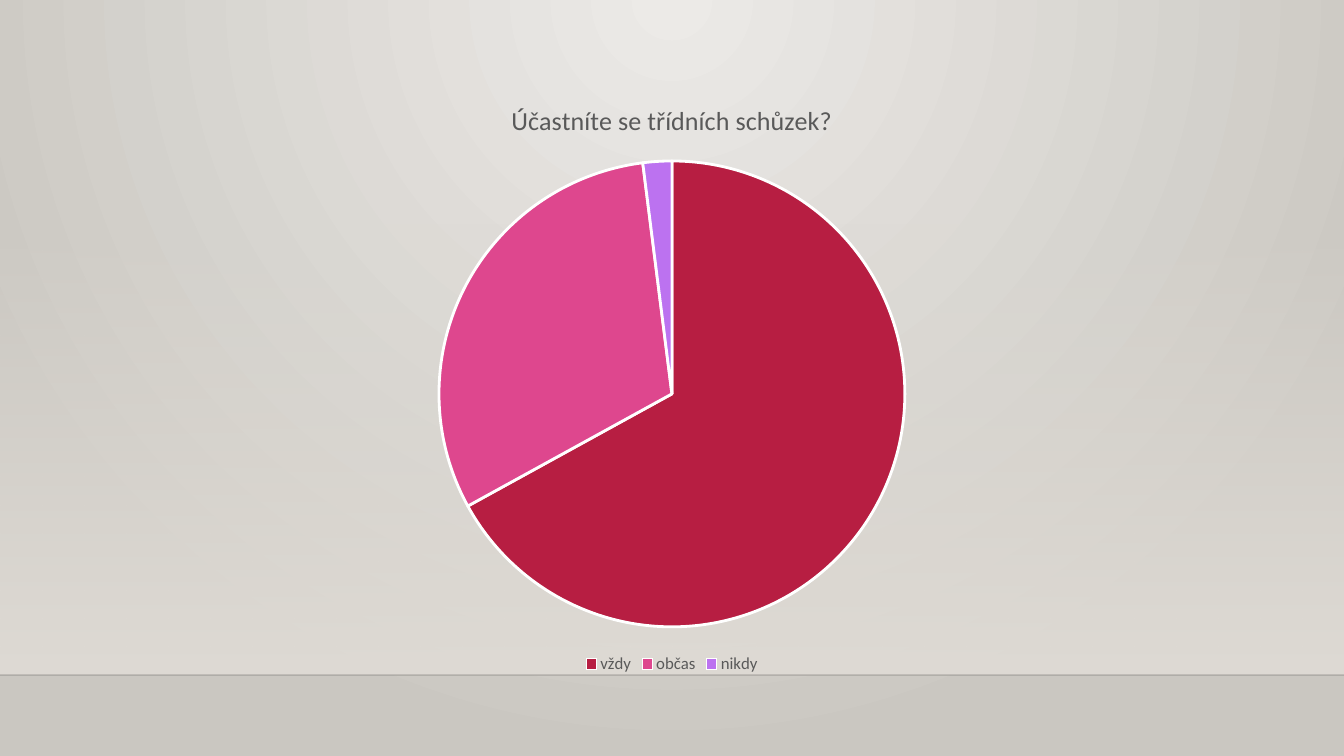
from lxml import etree
from pptx import Presentation
from pptx.chart.data import CategoryChartData
from pptx.dml.color import RGBColor
from pptx.enum.chart import XL_CHART_TYPE, XL_LEGEND_POSITION
from pptx.enum.shapes import MSO_CONNECTOR, MSO_SHAPE
from pptx.oxml import parse_xml
from pptx.oxml.ns import nsdecls, qn
from pptx.util import Pt

PIE = XL_CHART_TYPE.PIE
BOTTOM = XL_LEGEND_POSITION.BOTTOM
RECTANGLE = MSO_SHAPE.RECTANGLE
STRAIGHT = MSO_CONNECTOR.STRAIGHT

EMU_PER_PX = 914400 / 100.8
SLIDE_W, SLIDE_H = 1344, 756
FLOOR_Y = 675
FONT = "Calibri"
TEXT_GREY = "595959"

QUESTION = "Účastníte se třídních schůzek?"
# answer, share in percent, slice colour
ANSWERS = [
    ("vždy", 67, "B71E42"),
    ("občas", 31, "DE478E"),
    ("nikdy", 2, "BC72F0"),
]


def px(length):
    return round(length * EMU_PER_PX)


def color(hex_code):
    return RGBColor.from_string(hex_code)


def style_font(font, size, hex_code):
    font.name = FONT
    font.size = Pt(size)
    font.bold = False
    font.color.rgb = color(hex_code)


def set_gradient(fill, start, end):
    fill.gradient()
    for stop, hex_code, position in zip(fill.gradient_stops, (start, end), (0, 1)):
        stop.color.rgb = color(hex_code)
        stop.position = position


def set_alpha(parent, percent):
    """Make the first colour under parent partly transparent."""
    rgb = parent.find(".//" + qn("a:srgbClr"))
    etree.SubElement(rgb, qn("a:alpha"), val=str(percent * 1000))


def add_spotlight_background(slide):
    set_gradient(slide.background.fill, "ECEAE7", "CAC7C1")
    gradient = slide.element.find(".//" + qn("a:gradFill"))
    circle = parse_xml(
        f'<a:path {nsdecls("a")} path="circle">'
        '<a:fillToRect l="43000" t="0" r="43000" b="100000"/></a:path>'
    )
    gradient.replace(gradient.find(qn("a:lin")), circle)


def add_wall(slide, top):
    wall = slide.shapes.add_shape(
        RECTANGLE, 0, px(top), px(SLIDE_W), px(FLOOR_Y - top)
    )
    wall.shadow.inherit = False
    wall.line.fill.background()
    set_gradient(wall.fill, "DFDBD5", "DFDBD5")
    wall.fill.gradient_angle = 270
    set_alpha(wall.element.spPr, 0)


def add_floor_line(slide):
    edge = slide.shapes.add_connector(
        STRAIGHT, 0, px(FLOOR_Y), px(SLIDE_W), px(FLOOR_Y)
    )
    edge.line.color.rgb = color("000001")
    edge.line.width = Pt(1)
    set_alpha(edge.line._get_or_add_ln(), 20)
    etree.SubElement(edge.element.spPr, qn("a:effectLst"))


def place_plot(chart, x, y, w, h):
    """Fix the inner plot area, in fractions of the chart frame."""
    plot_area = chart.element.find(".//" + qn("c:plotArea"))
    for layout in plot_area.findall(qn("c:layout")):
        plot_area.remove(layout)
    plot_area.insert(0, parse_xml(
        f'<c:layout {nsdecls("c")}><c:manualLayout>'
        '<c:layoutTarget val="inner"/><c:xMode val="edge"/><c:yMode val="edge"/>'
        f'<c:x val="{x}"/><c:y val="{y}"/><c:w val="{w}"/><c:h val="{h}"/>'
        '</c:manualLayout></c:layout>'
    ))


def add_answer_pie(slide, left, top, width, height):
    names, shares, slice_colors = zip(*ANSWERS)
    survey = CategoryChartData()
    survey.categories = names
    survey.add_series(QUESTION, shares)
    chart = slide.shapes.add_chart(
        PIE, px(left), px(top), px(width), px(height), survey
    ).chart
    style_font(chart.font, 10, "000000")

    # Title
    heading = chart.chart_title.text_frame
    heading.text = QUESTION
    style_font(heading.paragraphs[0].runs[0].font, 18.6, TEXT_GREY)
    chart.chart_title.include_in_layout = False

    # Legend
    chart.has_legend = True
    chart.legend.position = BOTTOM
    chart.legend.include_in_layout = False
    style_font(chart.legend.font, 12, TEXT_GREY)

    # Slices
    pie = chart.plots[0]
    pie.vary_by_categories = True
    for index, slice_color in enumerate(slice_colors):
        look = pie.series[0].points[index].format
        look.fill.solid()
        look.fill.fore_color.rgb = color(slice_color)
        look.line.color.rgb = color("FFFFFF")
        look.line.width = Pt(2)
    place_plot(chart, 0.24, 0.13, 0.52, 0.79)


def main():
    deck = Presentation()
    deck.slide_width, deck.slide_height = px(SLIDE_W), px(SLIDE_H)
    slide = deck.slides.add_slide(deck.slide_layouts[6])

    # Backdrop
    add_spotlight_background(slide)
    add_wall(slide, 223)
    add_floor_line(slide)

    # Survey result
    add_answer_pie(slide, 224, 80, 896, 598)

    deck.save("out.pptx")


if __name__ == "__main__":
    main()
